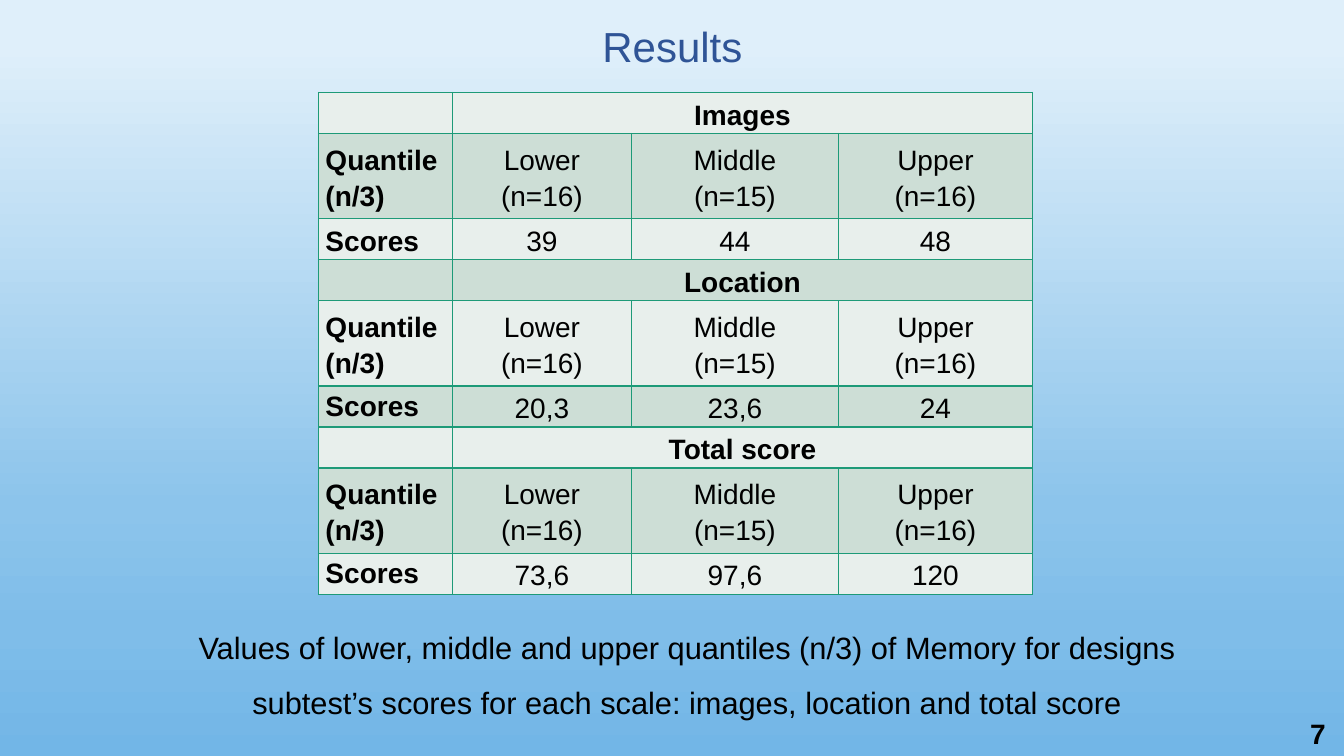
"""Build the results slide with the table of quantile scores."""
from lxml import etree
from pptx import Presentation
from pptx import util as u
from pptx.dml.color import RGBColor
from pptx.enum import text
from pptx.oxml.ns import qn

Pt = u.Pt
hues = {"title": "2F5496", "ink": "000000", "line": "1D9A78",
        "pale": "E8EFEC", "green": "CDDED6"}
sky = {6: "DFEFFA", 67: "8CC4EB", 83: "7FBDE9", 100: "72B6E7"}
mid, left = text.MSO_ANCHOR.MIDDLE, text.PP_ALIGN.LEFT
center, right = text.PP_ALIGN.CENTER, text.PP_ALIGN.RIGHT


def write(frame, words, size, hue, align, space, bold=False):
    frame.text = words
    for para in frame.paragraphs:
        para.alignment = align
        para.line_spacing = space
        font = para.font
        font.name, font.size, font.bold = "Arial", Pt(size), bold
        font.color.rgb = RGBColor.from_string(hues[hue])


def add_solid(parent, hue):
    fill = etree.SubElement(parent, qn("a:solidFill"))
    etree.SubElement(fill, qn("a:srgbClr"), val=hue)


deck = Presentation()
deck.slide_width, deck.slide_height = Pt(960), Pt(540)
slide = deck.slides.add_slide(deck.slide_layouts[6])

back = slide.background.fill
back.gradient()
back.gradient_angle = 270
stops = slide._element.find(".//" + qn("a:gsLst"))
for stop in list(stops):
    stops.remove(stop)
for place, hue in sky.items():
    stop = etree.SubElement(stops, qn("a:gs"), pos=str(place * 1000))
    etree.SubElement(stop, qn("a:srgbClr"), val=hue)

labels = [
    ("7", (738.7, 512.6, 215.3, 26.6), 20, "ink", right, 1, True, text.MSO_ANCHOR.BOTTOM),
    ("Values of lower, middle and upper quantiles (n/3) of Memory for designs "
     "subtest’s scores for each scale: images, location and total score",
     (103.7, 434.2, 774, 82.1), 22, "ink", center, 1.5, False, mid),
    ("Results", (225.4, 9.4, 509.8, 50.4), 30, "title", center, 0.9, False, mid),
]
for words, box, size, hue, align, space, bold, anchor in labels:
    frame = slide.shapes.add_textbox(*map(Pt, box)).text_frame
    frame.word_wrap = True
    frame.vertical_anchor = anchor
    write(frame, words, size, hue, align, space, bold)

scales = {"Images": ("39", "44", "48"),
          "Location": ("20,3", "23,6", "24"),
          "Total score": ("73,6", "97,6", "120")}
groups = ("Lower\n(n=16)", "Middle\n(n=15)", "Upper\n(n=16)")
rows = []
for scale, scores in scales.items():
    rows += [("", scale, "", ""), ("Quantile (n/3)", *groups), ("Scores", *scores)]

widths = (95.8, 127.7, 148, 138.5)
heights = (29.3, 60.9, 29.3) * 3
grid = slide.shapes.add_table(len(rows), len(widths), Pt(227.5), Pt(66.1),
                              Pt(sum(widths)), Pt(sum(heights))).table
grid.first_row = grid.horz_banding = False
for col, width in zip(grid.columns, widths):
    col.width = Pt(width)
for r, (row, height) in enumerate(zip(rows, heights)):
    grid.rows[r].height = Pt(height)
    head = r % 3 == 0
    for c, words in enumerate(row):
        cell = grid.cell(r, c)
        cell.margin_left = cell.margin_right = Pt(5)
        cell.margin_top = cell.margin_bottom = 0
        top = c == 0 and r in (5, 8)
        cell.vertical_anchor = text.MSO_ANCHOR.TOP if top else mid
        write(cell.text_frame, words, 20, "ink", center if c else left, 1.15,
              head or c == 0)
        props = cell._tc.get_or_add_tcPr()
        for side in "LRTB":
            edge = etree.SubElement(props, qn("a:ln" + side), w=str(Pt(1)))
            add_solid(edge, hues["line"])
        cell.fill.solid()
        cell.fill.fore_color.rgb = RGBColor.from_string(hues["green" if r % 2 else "pale"])
    if head:
        grid.cell(r, 1).merge(grid.cell(r, 3))

deck.save("out.pptx")
